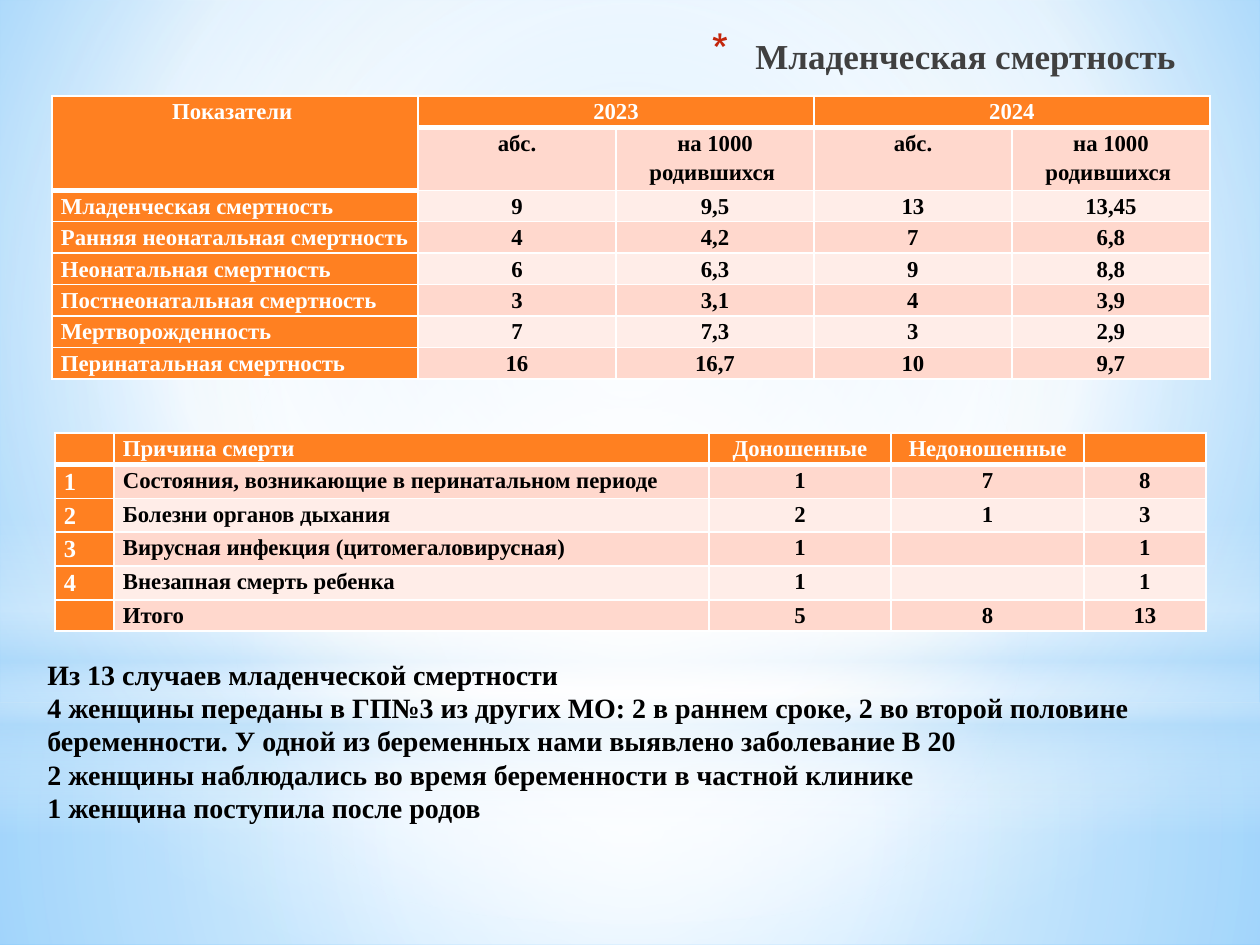
from dataclasses import dataclass

from lxml.etree import SubElement
from pptx import Presentation
from pptx.dml.color import RGBColor
from pptx.enum.shapes import MSO_SHAPE
from pptx.enum.text import MSO_ANCHOR, PP_ALIGN
from pptx.oxml.ns import qn
from pptx.util import Emu, Pt

EMU_PER_PX = 914400 / 126


def px(length):
    return Emu(round(length * EMU_PER_PX))


@dataclass(frozen=True)
class Theme:
    font: str = "Times New Roman"
    title_size: int = 20
    note_size: int = 16
    note_line: float = 19.1
    table_size: int = 13
    number_size: int = 14
    table_spacing: float = 1.15
    title: str = "404040"
    bullet: str = "C3260C"
    text: str = "000000"
    white: str = "FFFFFF"
    header: str = "FF8021"
    band_dark: str = "FFD8CD"
    band_light: str = "FFEDE8"
    glow: str = "B4DCFA"
    sky_center: str = "9ED5FF"
    sky_edge: str = "5BB9FF"


def replace_with_gradient(properties, stops, focus=None):
    """Swap a:noFill for a gradient of (position, colour, opacity) stops.

    focus is the left, top, right, bottom of a circular gradient;
    without it the gradient runs straight down.
    """
    empty_fill = properties.find(qn("a:noFill"))
    gradient = SubElement(properties, qn("a:gradFill"), rotWithShape="1")
    properties.replace(empty_fill, gradient)
    stop_list = SubElement(gradient, qn("a:gsLst"))
    for position, color, opacity in stops:
        stop = SubElement(stop_list, qn("a:gs"), pos=str(position * 1000))
        color_element = SubElement(stop, qn("a:srgbClr"), val=color)
        if opacity < 100:
            SubElement(color_element, qn("a:alpha"), val=str(opacity * 1000))
    if focus:
        circle = SubElement(gradient, qn("a:path"), path="circle")
        sides = {side: str(value * 1000) for side, value in zip("ltrb", focus)}
        SubElement(circle, qn("a:fillToRect"), **sides)
    else:
        SubElement(gradient, qn("a:lin"), ang="5400000", scaled="0")


class SlideBuilder:
    def __init__(self, slide, theme):
        self.slide = slide
        self.theme = theme

    def background(self, stops, focus):
        self.slide.background.fill.background()
        properties = self.slide.element.find(".//" + qn("p:bgPr"))
        replace_with_gradient(properties, stops, focus)

    def glow(self, kind, top, height, stops, focus=None):
        """Add a translucent shape as wide as the slide."""
        shape = self.slide.shapes.add_shape(kind, 0, px(top), px(1260), px(height))
        shape.shadow.inherit = False
        shape.line.fill.background()
        shape.fill.background()
        replace_with_gradient(shape.element.spPr, stops, focus)

    def format_runs(self, paragraph, size, color):
        for run in paragraph.runs:
            run.font.name = self.theme.font
            run.font.size = Pt(size)
            run.font.bold = True
            run.font.color.rgb = RGBColor.from_string(color)

    def text_box(self, left, top, width, height, text, size, color):
        box = self.slide.shapes.add_textbox(px(left), px(top), px(width), px(height))
        frame = box.text_frame
        frame.word_wrap = True
        frame.text = text
        for paragraph in frame.paragraphs:
            self.format_runs(paragraph, size, color)
        return frame

    def title(self, left, top, width, height, text):
        theme = self.theme
        frame = self.text_box(left, top, width, height, text, theme.title_size, theme.title)
        frame.vertical_anchor = MSO_ANCHOR.MIDDLE
        paragraph = frame.paragraphs[0]
        paragraph.alignment = PP_ALIGN.RIGHT
        properties = paragraph._p.get_or_add_pPr()
        properties.set("marL", str(px(44)))
        properties.set("indent", str(-px(44)))
        color = SubElement(properties, qn("a:buClr"))
        SubElement(color, qn("a:srgbClr"), val=theme.bullet)
        SubElement(properties, qn("a:buSzPct"), val="128000")
        SubElement(properties, qn("a:buChar"), char="*")

    def note(self, left, top, width, height, text):
        theme = self.theme
        frame = self.text_box(left, top, width, height, text, theme.note_size, theme.text)
        for paragraph in frame.paragraphs:
            paragraph.line_spacing = Pt(theme.note_line)

    def borders(self, cell, top, bottom):
        properties = cell._tc.get_or_add_tcPr()
        for side, width in zip("LRTB", (1, 1, top, bottom)):
            line = SubElement(properties, qn(f"a:ln{side}"), w=str(Pt(width)))
            fill = SubElement(line, qn("a:solidFill"))
            SubElement(fill, qn("a:srgbClr"), val=self.theme.white)

    def cell(self, cell, text, size, color, fill, alignment):
        cell.fill.solid()
        cell.fill.fore_color.rgb = RGBColor.from_string(fill)
        cell.margin_left = cell.margin_right = px(9)
        cell.margin_top = cell.margin_bottom = 0
        cell.text_frame.text = text
        paragraph = cell.text_frame.paragraphs[0]
        paragraph.alignment = alignment
        paragraph.line_spacing = self.theme.table_spacing
        self.format_runs(paragraph, size, color)
        if not text:
            SubElement(paragraph._p, qn("a:endParaRPr"), sz=str(size * 100))

    def table(self, left, top, widths, heights, rows, left_columns,
              centered_rows=0, first_size=None, merges=()):
        """Add a banded table; merges holds (row, column, last row, last column)."""
        theme = self.theme
        table = self.slide.shapes.add_table(
            len(rows), len(widths), px(left), px(top),
            px(sum(widths)), px(sum(heights))).table
        for column, width in zip(table.columns, widths):
            column.width = px(width)
        for row, height in zip(table.rows, heights):
            row.height = px(height)
        for r, values in enumerate(rows):
            for c, value in enumerate(values):
                cell = table.cell(r, c)
                depth = max(1, centered_rows) if c == 0 else 1
                self.borders(cell, 3 if r == depth else 1, 3 if r < depth else 1)
                is_header = r == 0 or c == 0
                band = theme.band_dark if r % 2 else theme.band_light
                is_left = c < left_columns and r >= centered_rows
                self.cell(
                    cell, value,
                    first_size if first_size and c == 0 else theme.table_size,
                    theme.white if is_header else theme.text,
                    theme.header if is_header else band,
                    PP_ALIGN.LEFT if is_left else PP_ALIGN.CENTER)
        for r, c, last_row, last_column in merges:
            table.cell(r, c).merge(table.cell(last_row, last_column))


INDICATORS = [
    ("Показатели ", "2023", "", "2024", ""),
    ("",) + ("абс.", "на 1000 родившихся ") * 2,
    ("Младенческая смертность", "9", "9,5", "13", "13,45"),
    ("Ранняя неонатальная смертность", "4", "4,2", "7", "6,8"),
    ("Неонатальная смертность", "6", "6,3", "9", "8,8"),
    ("Постнеонатальная смертность", "3", "3,1", "4", "3,9"),
    ("Мертворожденность", "7", "7,3", "3", "2,9"),
    ("Перинатальная смертность", "16", "16,7", "10", "9,7"),
]
CAUSES = [
    ("", "Причина смерти", "Доношенные", "Недоношенные", ""),
    ("1", "Состояния, возникающие в перинатальном периоде", "1", "7", "8"),
    ("2", "Болезни органов дыхания", "2", "1", "3"),
    ("3", "Вирусная инфекция (цитомегаловирусная)", "1", "", "1"),
    ("4", "Внезапная смерть ребенка", "1", "", "1"),
    ("", "Итого", "5", "8", "13"),
]
NOTES = [
    "Из 13 случаев младенческой смертности",
    "4 женщины переданы в ГП№3 из других МО: 2 в раннем сроке, 2 во второй половине "
    "беременности. У одной из беременных нами выявлено заболевание В 20",
    "2 женщины наблюдались во время беременности в частной клинике",
    "1 женщина поступила после родов",
]


def main():
    presentation = Presentation()
    presentation.slide_width, presentation.slide_height = px(1260), px(945)
    theme = Theme()
    builder = SlideBuilder(
        presentation.slides.add_slide(presentation.slide_layouts[6]), theme)
    white, glow = theme.white, theme.glow
    center = (50, 50, 50, 50)

    builder.background([(0, theme.sky_center, 100), (60, white, 100),
                        (100, theme.sky_edge, 100)], (20, 10, 20, 60))
    builder.glow(MSO_SHAPE.RECTANGLE, 703, 242,
                 [(0, white, 91), (37, white, 76), (100, glow, 79)], center)
    builder.glow(MSO_SHAPE.RECTANGLE, 0, 703,
                 [(0, white, 89), (48, white, 62), (100, glow, 79)], center)
    builder.glow(MSO_SHAPE.RECTANGLE, 519, 315,
                 [(0, white, 0), (29, white, 30), (45, glow, 40),
                  (55, white, 26), (65, glow, 60), (100, white, 0)])
    builder.glow(MSO_SHAPE.OVAL, 220, 703, [(0, white, 100), (56, white, 0)], center)

    builder.title(63, 26, 1134, 59, "Младенческая смертность ")
    builder.table(55, 433, [59, 595, 182, 193, 122], [31] * 6, CAUSES,
                  left_columns=2, first_size=theme.number_size)
    builder.table(52, 96, [366] + [198] * 4, [28, 57] + [29] * 6, INDICATORS,
                  left_columns=1, centered_rows=2,
                  merges=[(0, 0, 1, 0), (0, 1, 0, 2), (0, 3, 0, 4)])
    builder.note(35, 651, 1191, 183, "\n".join(NOTES))
    presentation.save("out.pptx")


if __name__ == "__main__":
    main()
